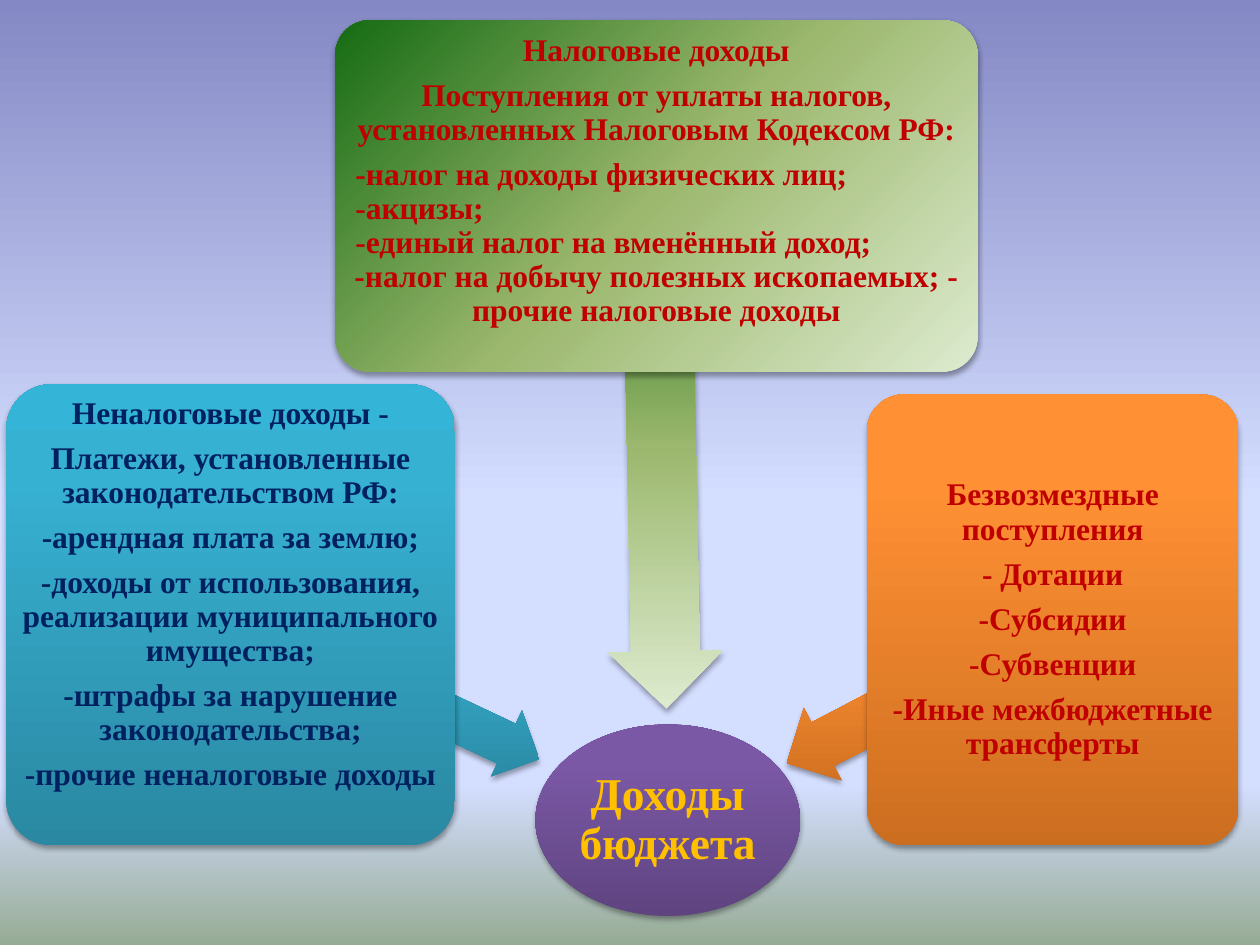
from dataclasses import dataclass

from pptx import Presentation
from pptx.dml.color import RGBColor
from pptx.enum.shapes import MSO_SHAPE
from pptx.enum.text import MSO_ANCHOR, PP_ALIGN
from pptx.oxml import parse_xml
from pptx.oxml.ns import nsdecls, qn
from pptx.util import Inches, Pt

ROUND, OVAL, ARROW = MSO_SHAPE.ROUNDED_RECTANGLE, MSO_SHAPE.OVAL, MSO_SHAPE.LEFT_ARROW
TOP, MIDDLE = MSO_ANCHOR.TOP, MSO_ANCHOR.MIDDLE
LEFT, CENTER = PP_ALIGN.LEFT, PP_ALIGN.CENTER


@dataclass(frozen=True)
class Theme:
    font: str = "Times New Roman"
    body: int = 18
    head: int = 26
    gap: float = 6.3
    red: str = "C00000"
    navy: str = "002060"
    gold: str = "FFC000"
    sky: tuple = ((0, "8488C4"), (53, "D4DEFF"), (83, "D4DEFF"), (100, "96AB94"))
    purple: tuple = ((0, "5F4480"), (80, "7B58A6"), (100, "7C57A8"))
    teal: tuple = ((0, "2A88A2"), (80, "37B1D2"), (100, "34B4D6"))
    green: tuple = ((0, "DDEBCF"), (50, "9CB86E"), (100, "156B13"))
    orange: tuple = ((0, "CC6E20"), (80, "FF9034"), (100, "FF9136"))


class Deck:
    """Holds the theme and the current slide, and draws each kind of element."""

    def __init__(self, theme):
        self.theme = theme
        self.file = Presentation()
        self.file.slide_width, self.file.slide_height = Inches(10), Inches(7.5)
        self.slide = self.file.slides.add_slide(self.file.slide_layouts[6])
        self.blend(self.slide.background.fill, self.slide.element, theme.sky, 90)

    def blend(self, fill, root, stops, angle):
        fill.gradient()
        node = root.find(".//" + qn("a:gradFill"))
        marks = "".join(
            f'<a:gs pos="{pos * 1000}"><a:srgbClr val="{color}"/></a:gs>'
            for pos, color in stops
        )
        node.getparent().replace(node, parse_xml(
            f'<a:gradFill {nsdecls("a")} rotWithShape="0"><a:gsLst>{marks}</a:gsLst>'
            f'<a:lin ang="{angle * 60000}" scaled="0"/></a:gradFill>'
        ))

    def shape(self, kind, box, stops, angle=270):
        item = self.slide.shapes.add_shape(kind, *map(Inches, box))
        self.blend(item.fill, item.element.spPr, stops, angle)
        item.line.fill.background()
        item.element.spPr.append(parse_xml(
            f'<a:effectLst {nsdecls("a")}><a:outerShdw blurRad="{Pt(3.1)}" '
            f'dist="{Pt(1.8)}" dir="5400000" rotWithShape="0"><a:srgbClr val="000000">'
            '<a:alpha val="35000"/></a:srgbClr></a:outerShdw></a:effectLst>'
        ))
        return item

    def arrow(self, box, turn, stops):
        item = self.shape(ARROW, box, stops)
        item.rotation = turn
        item.adjustments[0], item.adjustments[1] = 0.6, 0.5

    def card(self, box, stops, angle, lines, color, anchor=TOP, inset=0):
        item = self.shape(ROUND, box, stops, angle)
        item.adjustments[0] = 0.1
        self.label(item, lines, self.theme.body, color, anchor, inset)
        return item

    def label(self, item, lines, size, color, anchor=MIDDLE, inset=0):
        frame = item.text_frame
        frame.word_wrap, frame.vertical_anchor = True, anchor
        frame.margin_left = frame.margin_right = frame.margin_bottom = 0
        frame.margin_top = Inches(inset)
        frame.text = "\n".join(lines)
        for para in frame.paragraphs:
            para.alignment, para.line_spacing = CENTER, 0.9
            para.space_after = Pt(self.theme.gap)
            font = para.font
            font.name, font.size, font.bold = self.theme.font, Pt(size), True
            font.color.rgb = RGBColor.from_string(color)

    def align(self, paras, indent):
        for para in paras:
            para.alignment, para.space_after = LEFT, Pt(0)
            para._p.get_or_add_pPr().set("marL", str(Inches(indent)))


def main():
    theme = Theme()
    deck = Deck(theme)

    hub = deck.shape(OVAL, (4.25, 5.75, 2.1, 1.52), theme.purple)
    deck.label(hub, ["Доходы бюджета"], theme.head, theme.gold)

    deck.arrow((1.71, 5.16, 2.7, 0.58), 205.2, theme.teal)
    deck.card((0.05, 3.05, 3.56, 3.66), theme.teal, 270, [
        "Неналоговые доходы -",
        "Платежи, установленные законодательством РФ:",
        "-арендная плата за землю;",
        "-доходы от использования, реализации муниципального имущества;",
        "-штрафы за нарушение законодательства;",
        "-прочие неналоговые доходы",
    ], theme.navy)

    deck.arrow((3.18, 3.1, 4.14, 0.91), 268.9, theme.green)
    tax = deck.card((2.66, 0.16, 5.1, 2.79), theme.green, 225, [
        "Налоговые доходы",
        "Поступления от уплаты налогов, установленных Налоговым Кодексом РФ:",
        "-налог на доходы физических лиц;",
        "-акцизы;",
        "-единый налог на вменённый доход;",
        "-налог на добычу полезных ископаемых; - прочие налоговые доходы",
    ], theme.red, inset=0.03)
    deck.align(tax.text_frame.paragraphs[2:5], 0.08)

    deck.arrow((6.11, 5.19, 2.34, 0.65), 332.4, theme.orange)
    deck.card((6.88, 3.13, 2.95, 3.58), theme.orange, 270, [
        "Безвозмездные поступления",
        "- Дотации",
        "-Субсидии",
        "-Субвенции",
        "-Иные межбюджетные трансферты",
    ], theme.red, MIDDLE)

    deck.file.save("out.pptx")


if __name__ == "__main__":
    main()
